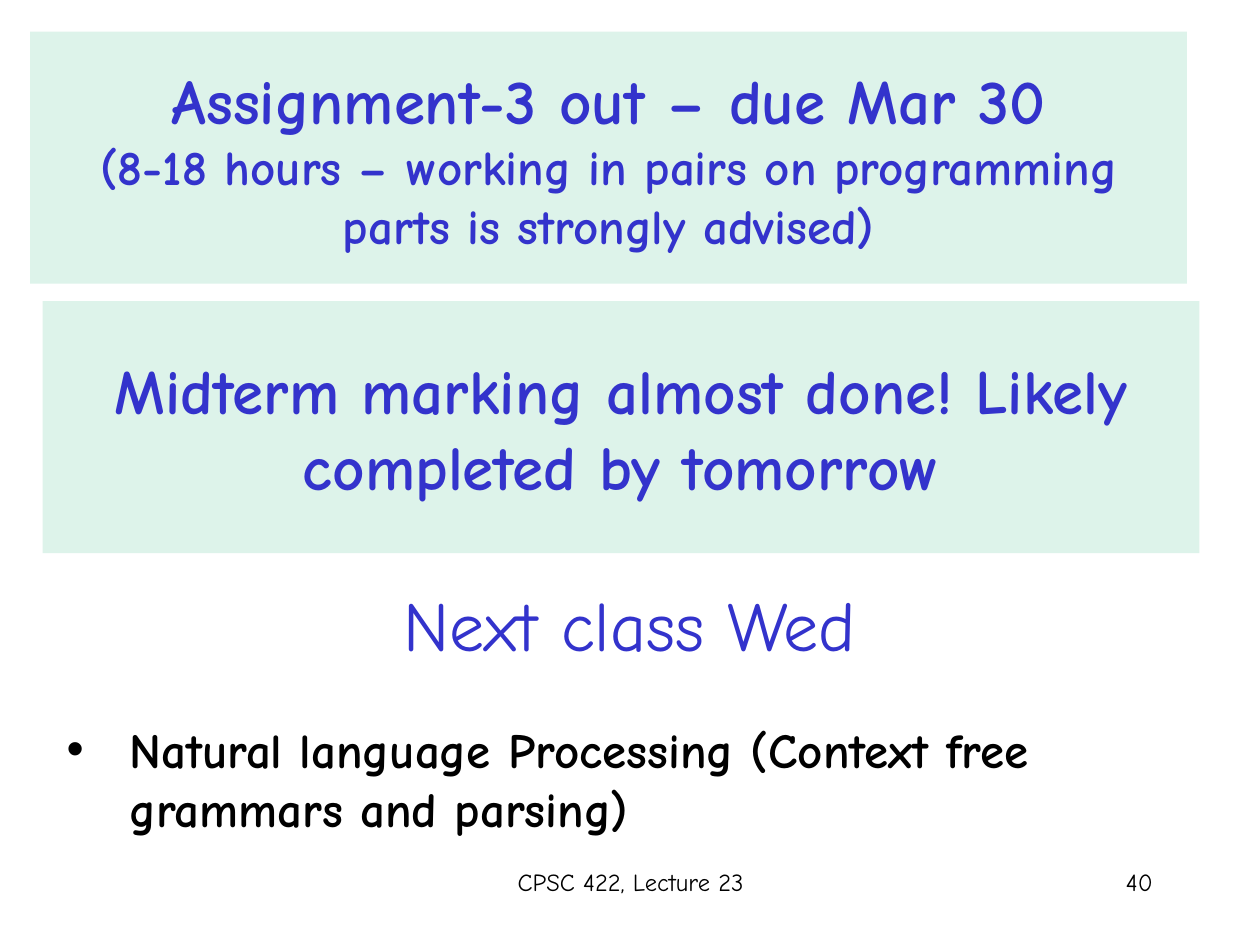
from dataclasses import dataclass

from pptx import Presentation
from pptx.dml.color import RGBColor
from pptx.enum.shapes import MSO_SHAPE
from pptx.enum.text import MSO_ANCHOR, MSO_AUTO_SIZE, PP_ALIGN
from pptx.util import Cm, Pt

RECT = MSO_SHAPE.RECTANGLE
TOP, MIDDLE = MSO_ANCHOR.TOP, MSO_ANCHOR.MIDDLE
LEFT, CENTER, RIGHT = PP_ALIGN.LEFT, PP_ALIGN.CENTER, PP_ALIGN.RIGHT
FIXED = MSO_AUTO_SIZE.NONE


@dataclass(frozen=True)
class Theme:
    font: str = "Comic Neue"
    blue: RGBColor = RGBColor(0x33, 0x33, 0xCC)
    black: RGBColor = RGBColor(0, 0, 0)
    mint: RGBColor = RGBColor(0xDD, 0xF3, 0xEA)
    title: int = 40
    head: int = 36
    body: int = 28
    foot: int = 14


THEME = Theme()


def place(shape, box):
    shape.left, shape.top, shape.width, shape.height = map(Cm, box)


def write(shape, lines, color, align, anchor, bold=False):
    """Fill a shape with (text, size) lines in one style."""
    frame = shape.text_frame
    frame.text = "\n".join(text for text, _ in lines)
    frame.word_wrap = True
    frame.auto_size = FIXED
    frame.vertical_anchor = anchor
    for par, (_, size) in zip(frame.paragraphs, lines):
        par.alignment = align
        par.space_before = Pt(0)
        for run in par.runs:
            font = run.font
            font.name, font.size, font.bold = THEME.font, Pt(size), bold
            font.color.rgb = color


def add_title(slide, box, text):
    title = slide.shapes.title
    place(title, box)
    write(title, [(text, THEME.title)], THEME.blue, CENTER, MIDDLE)


def add_list(slide, box, items):
    body = slide.placeholders[1]
    place(body, box)
    write(body, [(item, THEME.body) for item in items], THEME.black, LEFT, TOP, True)
    body.text_frame.margin_top = Cm(1.52)
    for par in body.text_frame.paragraphs:
        props = par._p.get_or_add_pPr()
        props.set("marL", str(Cm(1.27)))
        props.set("indent", str(-Cm(1.27)))


def add_note(slide, box, text, align):
    note = slide.shapes.add_textbox(*map(Cm, box))
    write(note, [(text, THEME.foot)], THEME.black, align, TOP)


def add_panel(slide, box, lines):
    panel = slide.shapes.add_shape(RECT, *map(Cm, box))
    panel.shadow.inherit = False
    panel.fill.solid()
    panel.fill.fore_color.rgb = THEME.mint
    panel.line.fill.background()
    write(panel, lines, THEME.blue, CENTER, MIDDLE, True)


def main():
    deck = Presentation()
    deck.slide_width, deck.slide_height = Cm(25.4), Cm(19.05)
    slide = deck.slides.add_slide(deck.slide_layouts[1])

    add_title(slide, (1.9, 10.97, 21.59, 3.18), "Next class Wed")
    add_list(slide, (1.09, 12.98, 22.83, 11.28),
             ["Natural language Processing (Context free grammars and parsing)"])
    add_note(slide, (8.69, 17.35, 8.05, 1.27), "CPSC 422, Lecture 23", CENTER)
    add_note(slide, (18.21, 17.35, 5.28, 1.27), "40", RIGHT)
    add_panel(slide, (0.61, 0.64, 23.32, 5.08), [
        ("Assignment-3 out – due Mar 30", THEME.head),
        ("(8-18 hours – working in pairs on programming parts is strongly advised)",
         THEME.body),
    ])
    add_panel(slide, (0.86, 6.07, 23.32, 5.08), [
        ("Midterm marking almost done! Likely completed by tomorrow", THEME.head),
    ])
    deck.save("out.pptx")


if __name__ == "__main__":
    main()
